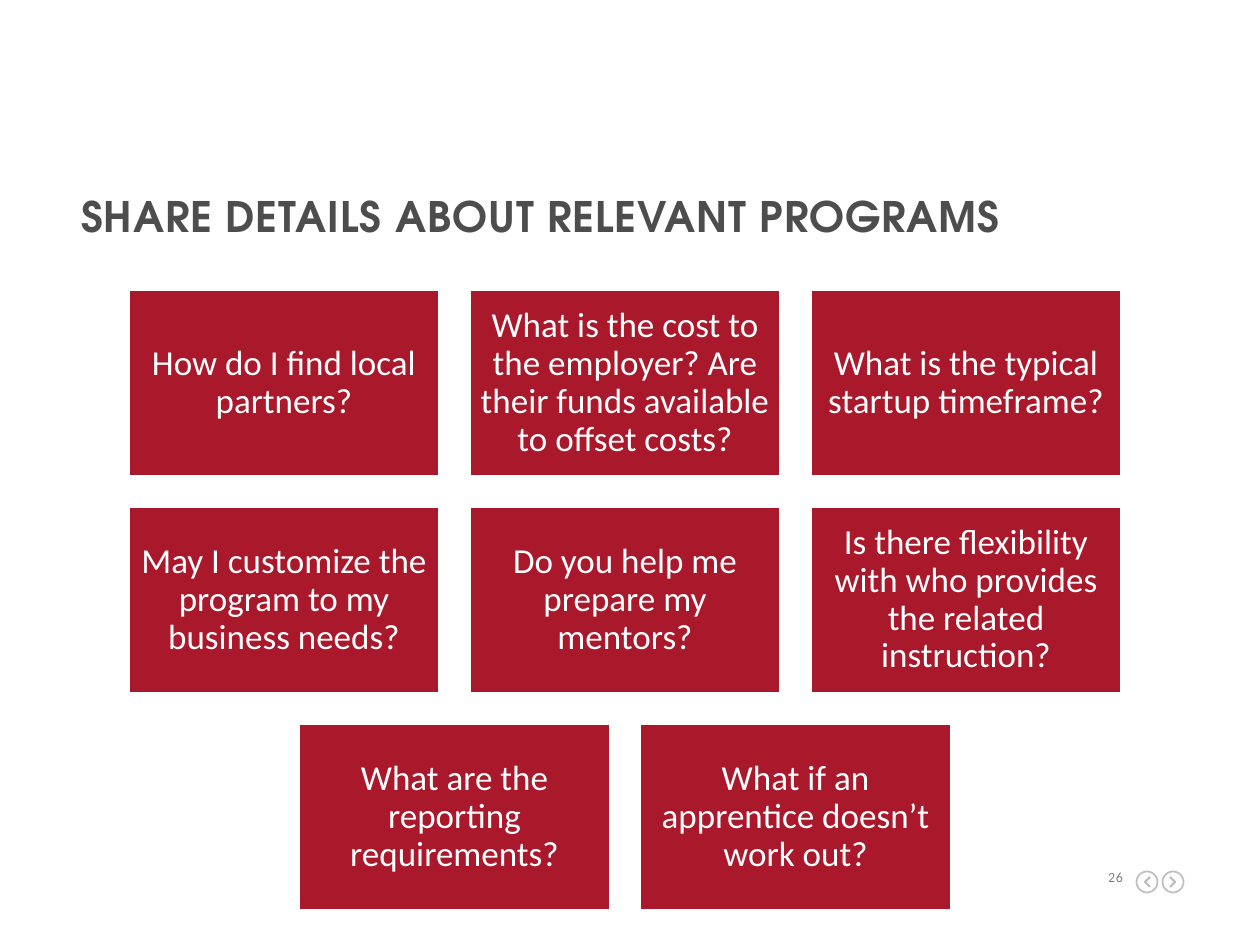
from pptx import Presentation
from pptx.dml.color import RGBColor
from pptx.enum.shapes import MSO_SHAPE
from pptx.enum.text import MSO_ANCHOR, MSO_AUTO_SIZE, PP_ALIGN
from pptx.util import Emu, Pt

SCALE = 914400 / 126
CARD_W, CARD_H, GAP = 310, 186, 31
MID, TOP = 625, 290
RED, GREY, WHITE = "AA182C", "BFBFBF", "FFFFFF"
ROWS = [
    ["How do I find local partners?",
     "What is the cost to the employer? Are their funds available to offset costs?",
     "What is the typical startup timeframe?"],
    ["May I customize the program to my business needs?",
     "Do you help me prepare my mentors?",
     "Is there flexibility with who provides the related instruction?"],
    ["What are the reporting requirements?",
     "What if an apprentice doesn’t work out?"],
]


def px(num):
    return Emu(round(num * SCALE))


def color(text):
    return RGBColor.from_string(text)


def outline(shape, tone, width):
    shape.shadow.inherit = False
    shape.line.color.rgb = color(tone)
    shape.line.width = Pt(width)


def write(shape, text, size, face, tone, align, anchor=MSO_ANCHOR.TOP,
          inset=0, bold=False, track=0, lead=1.0):
    """Put one styled run in the shape; track is in hundredths of a point."""
    frame = shape.text_frame
    margins = {f"margin_{side}": px(inset) for side in ("left", "top", "right", "bottom")}
    layout = {"word_wrap": True, "auto_size": MSO_AUTO_SIZE.NONE,
              "vertical_anchor": anchor, **margins}
    for name, value in layout.items():
        setattr(frame, name, value)
    para = frame.paragraphs[0]
    para.alignment, para.line_spacing = align, lead
    run = para.add_run()
    run.text = text
    for name, value in {"size": Pt(size), "name": face, "bold": bold}.items():
        setattr(run.font, name, value)
    run.font.color.rgb = color(tone)
    if track:
        run._r.get_or_add_rPr().set("spc", str(track))


def add_title(slide, text):
    title = slide.shapes.title
    box = {"left": 81, "top": 190, "width": 1096, "height": 71}
    for name, value in box.items():
        setattr(title, name, px(value))
    write(title, text, 24, "TeX Gyre Adventor", "4D4D4D", PP_ALIGN.LEFT,
          bold=True, track=50)


def add_card(slide, left, top, text):
    card = slide.shapes.add_shape(
        MSO_SHAPE.RECTANGLE, px(left), px(top), px(CARD_W), px(CARD_H))
    card.fill.solid()
    card.fill.fore_color.rgb = color(RED)
    outline(card, WHITE, 1)
    write(card, text, 20, "Calibri", WHITE, PP_ALIGN.CENTER,
          MSO_ANCHOR.MIDDLE, inset=10, lead=0.9)


def add_cards(slide):
    """Lay out the rows, each centred on MID."""
    for row, texts in enumerate(ROWS):
        span = len(texts) * (CARD_W + GAP) - GAP
        for col, text in enumerate(texts):
            add_card(slide, MID - span / 2 + col * (CARD_W + GAP),
                     TOP + row * (CARD_H + GAP), text)


def add_arrow(slide, x, y, way):
    """Draw a ringed chevron centred on x, y; way is -1 for left, 1 for right."""
    ring = slide.shapes.add_shape(
        MSO_SHAPE.OVAL, px(x - 10.5), px(y - 10.5), px(21), px(21))
    pen = slide.shapes.build_freeform(px(x - 3 * way), px(y - 5))
    pen.add_line_segments(
        [(px(x + 2 * way), px(y)), (px(x - 3 * way), px(y + 5))], close=False)
    for shape, width in ((ring, 1), (pen.convert_to_shape(), 1.25)):
        shape.fill.background()
        outline(shape, GREY, width)


def add_number(slide, text):
    box = slide.shapes.add_textbox(px(1094), px(868), px(29), px(16))
    write(box, text, 8, "Calibri", "808080", PP_ALIGN.RIGHT, track=30)


def main():
    deck = Presentation()
    deck.slide_width, deck.slide_height = px(1260), px(945)
    slide = deck.slides.add_slide(deck.slide_layouts[5])
    add_number(slide, "26")
    add_arrow(slide, 1173, 882, 1)
    add_arrow(slide, 1147, 882, -1)
    add_title(slide, "SHARE DETAILS ABOUT RELEVANT PROGRAMS")
    add_cards(slide)
    deck.save("out.pptx")


if __name__ == "__main__":
    main()
